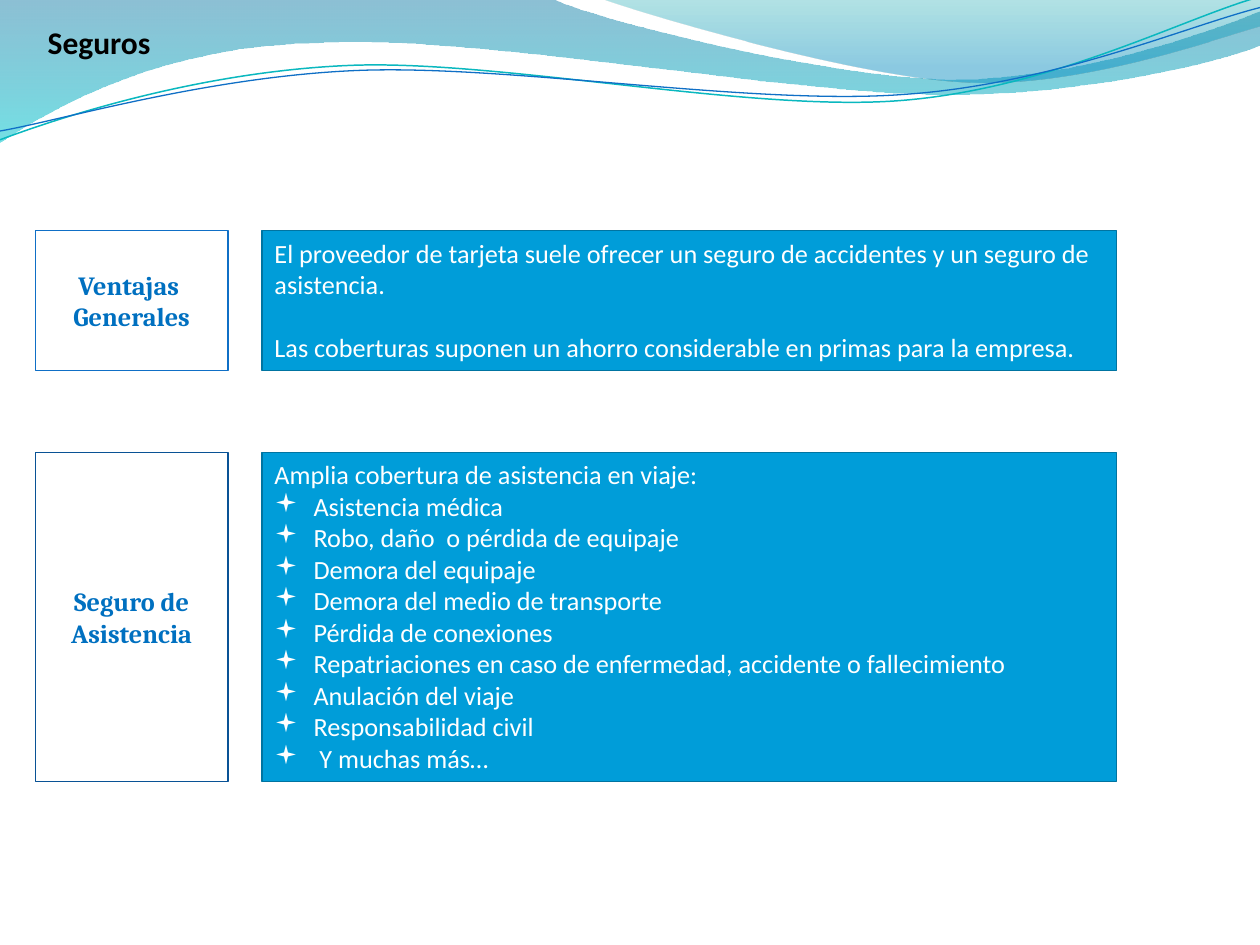
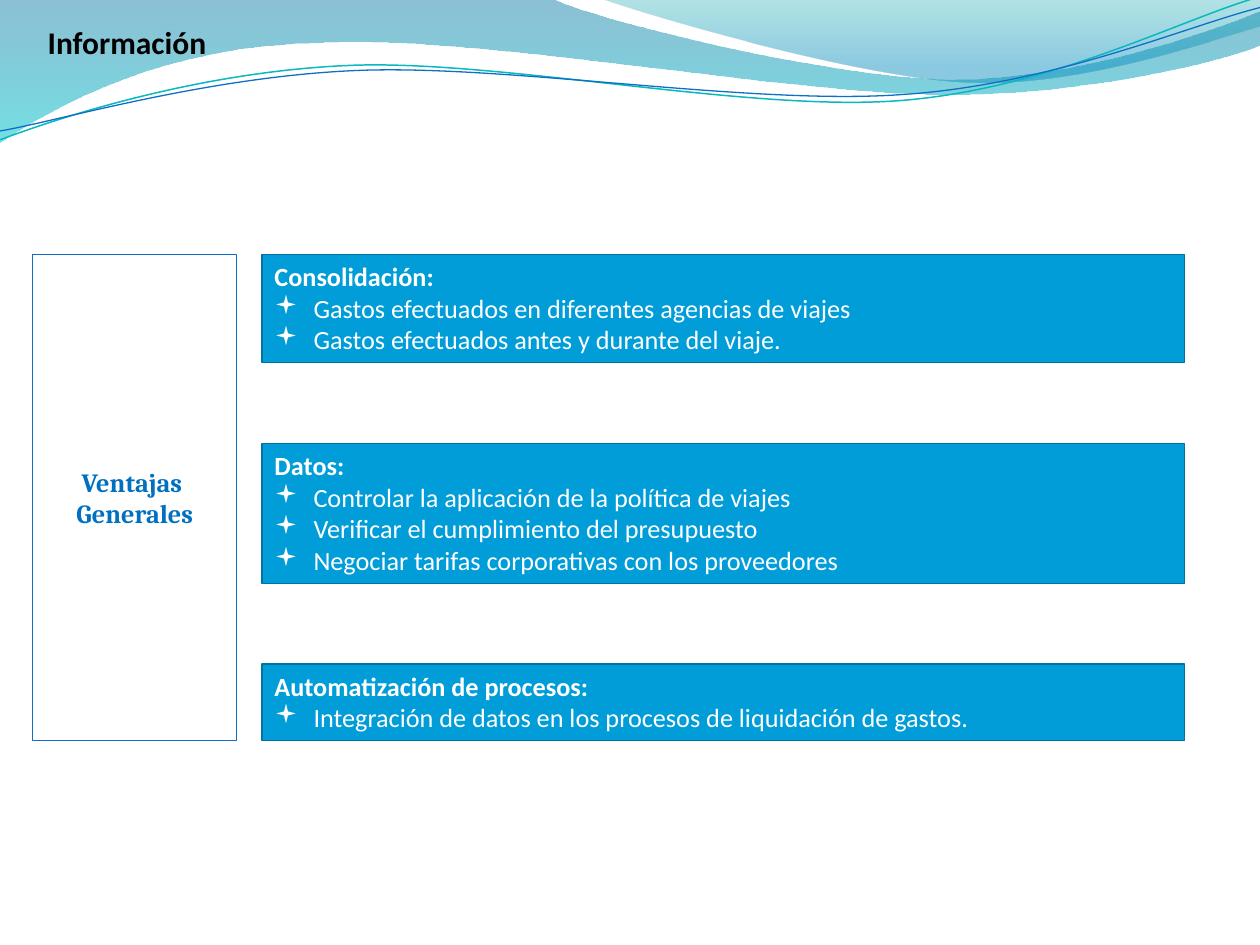
"""Builds two slides on the insurance and information advantages of a company card."""
from dataclasses import dataclass

from lxml.etree import SubElement
from pptx import Presentation
from pptx.dml.color import RGBColor
from pptx.enum.shapes import MSO_SHAPE
from pptx.enum.text import MSO_ANCHOR, PP_ALIGN
from pptx.oxml.ns import qn
from pptx.util import Inches, Pt

PAGES = [
    {
        "title": "Seguros", "title_width": 1.02, "top": 1.83, "gap": 0.65,
        "label_left": 0.28, "label_width": 1.53, "panel_width": 6.78,
        "groups": [
            {"label": ["Ventajas ", "Generales"], "edge": "0F6FC6", "panels": [
                {"lines": 4, "bold": False, "bullets": False, "gap_points": 18,
                 "heading": "El proveedor de tarjeta suele ofrecer un seguro de accidentes "
                            "y un seguro de asistencia.",
                 "items": ["Las coberturas suponen un ahorro considerable en primas "
                           "para la empresa."]},
            ]},
            {"label": ["Seguro de Asistencia"], "edge": "095295", "panels": [
                {"lines": 10, "bold": False, "bullets": True, "gap_points": 0,
                 "heading": "Amplia cobertura de asistencia en viaje:",
                 "items": ["Asistencia médica", "Robo, daño  o pérdida de equipaje",
                           "Demora del equipaje", "Demora del medio de transporte",
                           "Pérdida de conexiones",
                           "Repatriaciones en caso de enfermedad, accidente o fallecimiento",
                           "Anulación del viaje", "Responsabilidad civil",
                           " Y muchas más…"]},
            ]},
        ],
    },
    {
        "title": "Información", "title_width": 1.47, "top": 2.02, "gap": 0.64,
        "label_left": 0.26, "label_width": 1.62, "panel_width": 7.32,
        "groups": [
            {"label": ["Ventajas ", "Generales"], "edge": "0F6FC6", "panels": [
                {"lines": 3, "bold": True, "bullets": True, "gap_points": 0,
                 "heading": "Consolidación:",
                 "items": ["Gastos efectuados en diferentes agencias de viajes",
                           "Gastos efectuados antes y durante del viaje."]},
                {"lines": 4, "bold": True, "bullets": True, "gap_points": 0,
                 "heading": "Datos:",
                 "items": ["Controlar la aplicación de la política de viajes",
                           "Verificar el cumplimiento del presupuesto",
                           "Negociar tarifas corporativas con los proveedores"]},
                {"lines": 2, "bold": True, "bullets": True, "gap_points": 0,
                 "heading": "Automatización de procesos:",
                 "items": ["Integración de datos en los procesos de liquidación de gastos."]},
            ]},
        ],
    },
]

BANDS = [
    {"stops": [(0, "0074A1", 45), (1, "00C6CF", 55)],
     "route": [(0, 0), (4.4, 0), (4.76, 0.17, 6.64, 0.63, 7.58, 0.63),
               (8.53, 0.63, 9.58, 0.26, 10, 0.09), (10, 0.36),
               (9.83, 0.44, 8.7, 0.76, 7.46, 0.75), (6.22, 0.75, 3.82, 0.28, 2.57, 0.34),
               (1.29, 0.36, 0.46, 0.83, 0, 1.13)]},
    {"stops": [(0, "00A1A9", 30), (0.8, "008BBF", 45)],
     "route": [(4.79, 0), (5.09, 0.11, 6.82, 0.62, 7.69, 0.65),
               (8.56, 0.69, 9.61, 0.32, 10, 0.21), (10, 0)]},
]
WAVES = [
    {"color": "0AB8BF", "width": 0.85,
     "route": [(0, 1.11), (0.48, 0.93, 1.58, 0.57, 2.77, 0.52),
               (3.95, 0.47, 5.93, 0.89, 7.13, 0.8), (8.33, 0.71, 9.38, 0.15, 9.98, -0.02)]},
    {"color": "0F6FC6", "width": 0.75,
     "route": [(0, 1.04), (0.47, 0.96, 1.64, 0.61, 2.83, 0.56),
               (4.03, 0.51, 5.97, 0.84, 7.17, 0.75), (8.36, 0.67, 9.41, 0.21, 10, 0.06)]},
]


@dataclass(frozen=True)
class Theme:
    white: str = "FFFFFF"
    black: str = "000000"
    panel: str = "009DD9"
    panel_edge: str = "0074A1"
    label: str = "0070C0"
    body_font: str = "Calibri"
    label_font: str = "Cambria"
    bullet_font: str = "Wingdings"
    title_size: float = 18
    text_size: float = 15
    edge_width: float = 0.75


THEME = Theme()
TITLE_FORMAT = {"name": THEME.body_font, "size": Pt(THEME.title_size), "bold": True}
LABEL_FORMAT = {"name": THEME.label_font, "size": Pt(THEME.text_size), "bold": True}
BODY_FORMAT = {"name": THEME.body_font, "size": Pt(THEME.text_size)}
PANEL_LEFT = 2.08
BULLET_INDENT = 0.31


def rgb(color):
    return RGBColor.from_string(color)


def write(para, text, color, formats):
    span = para.add_run()
    span.text = text
    for name, value in formats.items():
        setattr(span.font, name, value)
    span.font.color.rgb = rgb(color)


def next_paragraph(frame, index):
    return frame.add_paragraph() if index else frame.paragraphs[0]


def add_bullet(para):
    properties = para._p.get_or_add_pPr()
    properties.set("marL", str(Inches(BULLET_INDENT)))
    properties.set("indent", str(-Inches(BULLET_INDENT)))
    SubElement(properties, qn("a:buFont")).set("typeface", THEME.bullet_font)
    SubElement(properties, qn("a:buChar")).set("char", "▪")


def add_outline(page, route, close):
    ends = [tuple(map(Inches, step[-2:])) for step in route]
    builder = page.shapes.build_freeform(*ends[0])
    builder.add_line_segments(ends[1:], close=close)
    outline = builder.convert_to_shape()
    outline.shadow.inherit = False
    segments = list(outline.element.iter(qn("a:lnTo")))
    for segment, step in zip(segments, route[1:]):
        if len(step) == 6:
            bend(segment, step, outline)
    return outline


def bend(segment, step, outline):
    curve = SubElement(segment.getparent(), qn("a:cubicBezTo"))
    for x, y in zip(step[::2], step[1::2]):
        point = SubElement(curve, qn("a:pt"))
        point.set("x", str(Inches(x) - outline.left))
        point.set("y", str(Inches(y) - outline.top))
    segment.getparent().replace(segment, curve)


def add_backdrop(page):
    for band in BANDS:
        shape = add_outline(page, band["route"], True)
        shape.line.fill.background()
        shape.fill.gradient()
        shape.fill.gradient_angle = 270
        for stop, (position, color, opacity) in zip(shape.fill.gradient_stops, band["stops"]):
            stop.position = position
            stop.color.rgb = rgb(color)
        tints = shape.element.spPr.iter(qn("a:srgbClr"))
        for tint, (position, color, opacity) in zip(tints, band["stops"]):
            SubElement(tint, qn("a:alpha")).set("val", str(opacity * 1000))
    for wave in WAVES:
        shape = add_outline(page, wave["route"], False)
        shape.fill.background()
        shape.line.color.rgb = rgb(wave["color"])
        shape.line.width = Pt(wave["width"])


def share_backdrop(page, layout):
    for placeholder in list(layout.placeholders):
        layout.shapes.element.remove(placeholder.element)
    for shape in list(page.shapes):
        layout.shapes.element.append(shape.element)


def add_title(page, text, width):
    box = page.shapes.add_textbox(Inches(0.28), Inches(0.13), Inches(width), Inches(0.4))
    box.text_frame.word_wrap = False
    write(box.text_frame.paragraphs[0], text, THEME.black, TITLE_FORMAT)


def add_box(page, area, fill, edge, anchor):
    box = page.shapes.add_shape(MSO_SHAPE.RECTANGLE, *map(Inches, area))
    box.shadow.inherit = False
    box.fill.solid()
    box.fill.fore_color.rgb = rgb(fill)
    box.line.color.rgb = rgb(edge)
    box.line.width = Pt(THEME.edge_width)
    box.text_frame.word_wrap = True
    box.text_frame.vertical_anchor = anchor
    return box.text_frame


def add_label(page, area, group):
    frame = add_box(page, area, THEME.white, group["edge"], MSO_ANCHOR.MIDDLE)
    for index, text in enumerate(group["label"]):
        para = next_paragraph(frame, index)
        para.alignment = PP_ALIGN.CENTER
        write(para, text, THEME.label, LABEL_FORMAT)


def add_panel(page, area, panel):
    frame = add_box(page, area, THEME.panel, THEME.panel_edge, MSO_ANCHOR.TOP)
    for index, text in enumerate([panel["heading"], *panel["items"]]):
        para = next_paragraph(frame, index)
        para.alignment = PP_ALIGN.LEFT
        if index:
            para.space_before = Pt(panel["gap_points"])
            if panel["bullets"]:
                add_bullet(para)
        bold = panel["bold"] and index == 0
        write(para, text, THEME.white, {**BODY_FORMAT, "bold": bold})


def panel_height(panel):
    return 0.11 + 0.25 * panel["lines"]


def add_content(page, content):
    add_title(page, content["title"], content["title_width"])
    top = content["top"]
    for group in content["groups"]:
        group_top = top
        for panel in group["panels"]:
            height = panel_height(panel)
            add_panel(page, (PANEL_LEFT, top, content["panel_width"], height), panel)
            top += height + content["gap"]
        group_height = top - content["gap"] - group_top
        add_label(page, (content["label_left"], group_top,
                         content["label_width"], group_height), group)


def main():
    deck = Presentation()
    deck.slide_width, deck.slide_height = Inches(10), Inches(7.5)
    blank = deck.slide_layouts[6]
    pages = [deck.slides.add_slide(blank) for content in PAGES]
    add_backdrop(pages[0])
    share_backdrop(pages[0], blank)
    for page, content in zip(pages, PAGES):
        add_content(page, content)
    deck.save("out.pptx")


if __name__ == "__main__":
    main()
